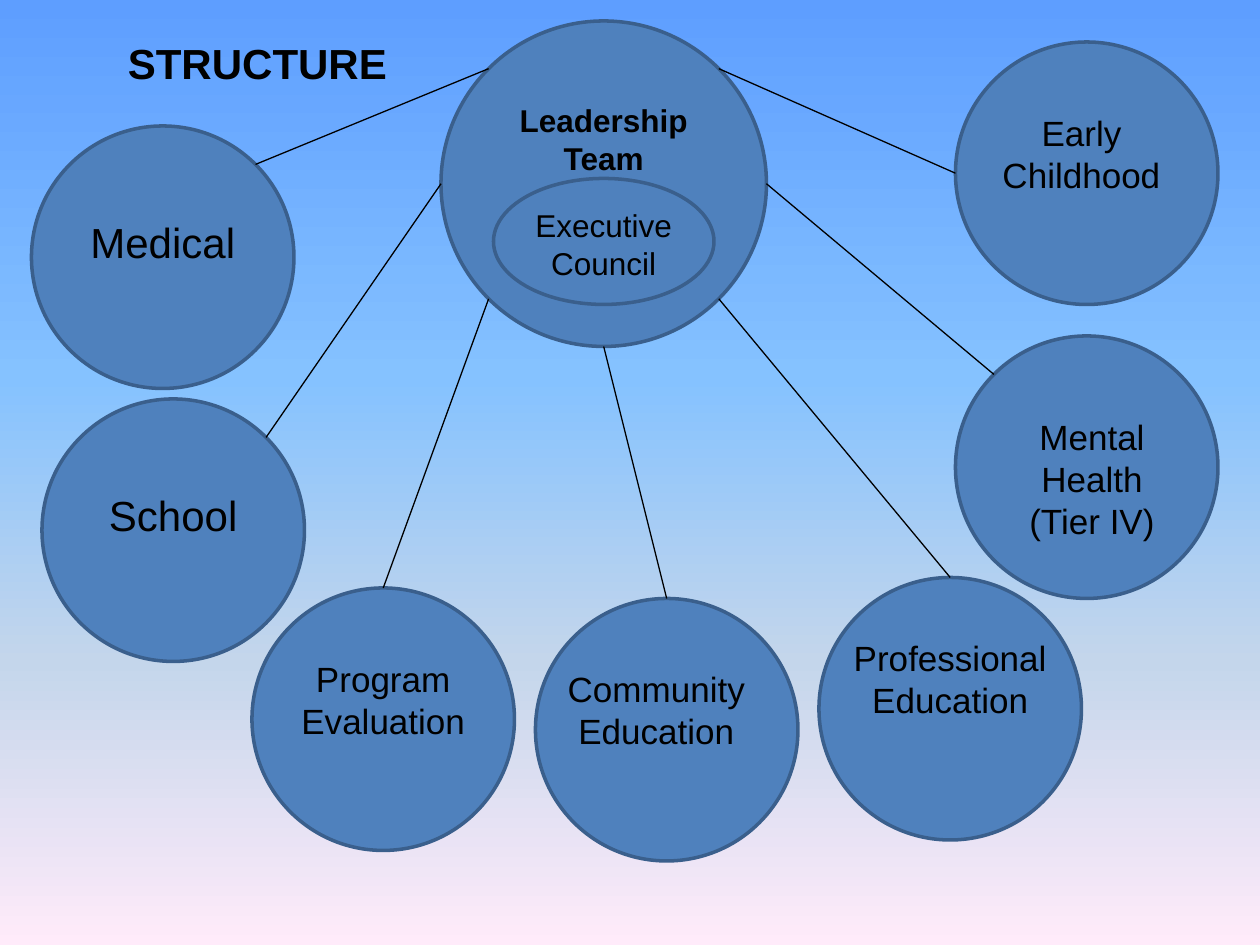
import math
from dataclasses import dataclass

import pptx
import pptx.dml.color
import pptx.enum.shapes
import pptx.enum.text
import pptx.oxml
import pptx.oxml.ns
import pptx.util

Pt = pptx.util.Pt
RGB = pptx.dml.color.RGBColor.from_string
qn = pptx.oxml.ns.qn


@dataclass
class Theme:
    font: str = "Arial"
    ink: str = "000000"
    disc: str = "4F81BD"
    rim: str = "3A5F8C"
    sky: tuple = ((0, "5E9EFF"), (40, "85C2FF"), (70, "C4D6EB"), (100, "FFEBFA"))
    title: int = 24
    group: int = 20
    core: int = 18


theme = Theme()
deck = pptx.Presentation()
deck.slide_width, deck.slide_height = Pt(720), Pt(540)
slide = deck.slides.add_slide(deck.slide_layouts[6])


def add_disc(x, y, w, h):
    disc = slide.shapes.add_shape(
        pptx.enum.shapes.MSO_SHAPE.OVAL, Pt(x), Pt(y), Pt(w), Pt(h))
    disc.shadow.inherit = False
    disc.fill.solid()
    disc.fill.fore_color.rgb = RGB(theme.disc)
    disc.line.color.rgb = RGB(theme.rim)
    disc.line.width = Pt(2)
    return disc


def rim_point(x, y, size, angle):
    """Point on a circle's rim; the angle runs counterclockwise from the right."""
    turn = math.radians(angle)
    half = size / 2
    return Pt(x + half + half * math.cos(turn)), Pt(y + half - half * math.sin(turn))


# Background gradient, top to bottom
fill = slide.background.fill
fill.gradient()
fill.gradient_angle = 270
stops = slide.element.find(".//" + qn("a:gsLst"))
for stop in list(stops):
    stops.remove(stop)
for place, color in theme.sky:
    stop = pptx.oxml.parse_xml(
        f'<a:gs {pptx.oxml.ns.nsdecls("a")} pos="{place * 1000}">'
        f'<a:srgbClr val="{color}"/></a:gs>')
    stops.append(stop)

# Leadership circle, then each group: left, top, angle at hub, angle at group
hub = (252, 12, 186)
add_disc(*hub, hub[2])
size = 150
groups = [
    (18, 72, 135, 45),     # Medical
    (24, 228, 180, 45),    # School
    (144, 336, 225, 90),   # Program Evaluation
    (306, 342, 270, 90),   # Community Education
    (468, 330, 315, 90),   # Professional Education
    (546, 192, 0, 135),    # Mental Health
    (546, 24, 45, 180),    # Early Childhood
]
discs = [add_disc(x, y, size, size) for x, y, *_ in groups]

# Lines from the leadership circle to the groups
for disc, (x, y, start, end) in zip(discs, groups):
    line = slide.shapes.add_connector(
        pptx.enum.shapes.MSO_CONNECTOR.STRAIGHT,
        *rim_point(*hub, start), *rim_point(x, y, size, end))
    line.line.color.rgb = RGB(theme.ink)
    line.line.width = Pt(0.75)
    line.element.spPr.append(pptx.oxml.parse_xml(
        f'<a:effectLst {pptx.oxml.ns.nsdecls("a")}/>'))
    if end == 90:
        line.end_connect(disc, 0)

# Executive council inside the leadership circle
add_disc(282, 102, 126, 72)

# Title and labels: text, left, top, width, height, type size, bold
labels = [
    ("STRUCTURE", 66, 18, 204, 37, theme.title, True),
    ("Leadership Team", 270, 54, 150, 29, theme.core, True),
    ("Executive Council", 294, 114, 102, 51, theme.core, False),
    ("Medical", 36, 120, 114, 37, theme.title, False),
    ("School", 30, 276, 138, 37, theme.title, False),
    ("Program Evaluation", 162, 372, 114, 55, theme.group, False),
    ("Community Education", 312, 378, 126, 55, theme.group, False),
    ("Professional Education", 474, 360, 138, 55, theme.group, False),
    ("Mental Health\n(Tier IV)", 564, 234, 120, 80, theme.group, False),
    ("Early Childhood", 564, 60, 108, 55, theme.group, False),
]
for text, x, y, w, h, points, bold in labels:
    frame = slide.shapes.add_textbox(Pt(x), Pt(y), Pt(w), Pt(h)).text_frame
    frame.word_wrap = True
    frame.auto_size = pptx.enum.text.MSO_AUTO_SIZE.SHAPE_TO_FIT_TEXT
    frame.text = text
    for para in frame.paragraphs:
        if text != "STRUCTURE":
            para.alignment = pptx.enum.text.PP_ALIGN.CENTER
        para.font.name = theme.font
        para.font.size = Pt(points)
        para.font.bold = bold
        para.font.color.rgb = RGB(theme.ink)

deck.save("out.pptx")
